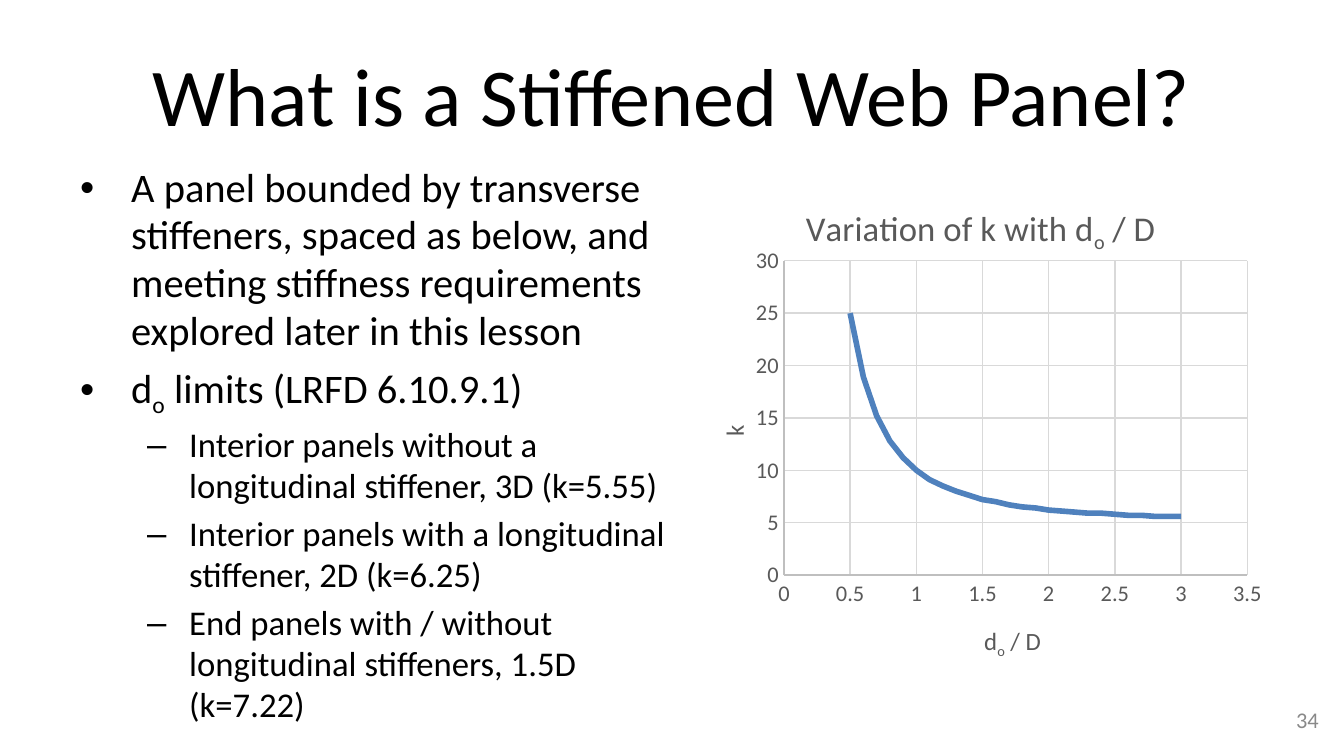
from lxml import etree
from pptx import Presentation
from pptx.chart.data import XyChartData
from pptx.dml.color import RGBColor
from pptx.enum.chart import XL_CHART_TYPE, XL_TICK_MARK
from pptx.enum.text import MSO_ANCHOR, PP_ALIGN
from pptx.oxml.ns import qn
from pptx.util import Emu, Pt

SCATTER = XL_CHART_TYPE.XY_SCATTER_LINES_NO_MARKERS
NO_TICK = XL_TICK_MARK.NONE
TOP, MIDDLE = MSO_ANCHOR.TOP, MSO_ANCHOR.MIDDLE
LEFT, CENTER, RIGHT = PP_ALIGN.LEFT, PP_ALIGN.CENTER, PP_ALIGN.RIGHT
FONT = "Calibri"
BLACK, GRAY, AXIS, GRID, BLUE = "000000", "595959", "BFBFBF", "D9D9D9", "4F81BD"
EMU_PER_PX = 914400 / 134.4

LEVELS = {
    0: dict(size=21.7, bullet="•", margin=51, hang=51, before=4.6),
    1: dict(size=18.6, bullet="–", margin=109, hang=42, before=4),
}
POINTS = [
    (0, "A panel bounded by transverse stiffeners, spaced as below, and "
        "meeting stiffness requirements explored later in this lesson"),
    (0, "d~o~ limits (LRFD 6.10.9.1)"),
    (1, "Interior panels without a longitudinal stiffener, 3D (k=5.55)"),
    (1, "Interior panels with a longitudinal stiffener, 2D (k=6.25)"),
    (1, "End panels with / without longitudinal stiffeners, 1.5D (k=7.22)"),
]


def px(length):
    return Emu(round(length * EMU_PER_PX))


def rgb(color):
    return RGBColor.from_string(color)


def format_font(font, size, color):
    font.name = FONT
    font.size = Pt(size)
    font.bold = False
    font.color.rgb = rgb(color)


def write(paragraph, text, size=12, color=BLACK, align=LEFT):
    paragraph.alignment = align
    for index, part in enumerate(text.split("~")):
        if part:
            run = paragraph.add_run()
            run.text = part
            format_font(run.font, size, color)
            if index % 2:
                run.font._element.set("baseline", "-25000")


def add_frame(slide, left, top, width, height, anchor=MIDDLE):
    frame = slide.shapes.add_textbox(
        px(left), px(top), px(width), px(height)).text_frame
    frame.word_wrap = True
    frame.vertical_anchor = anchor
    return frame


def add_bullet(paragraph, bullet, margin, hang):
    properties = paragraph._p.get_or_add_pPr()
    properties.set("marL", str(px(margin)))
    properties.set("indent", str(-px(hang)))
    etree.SubElement(properties, qn("a:buFont"), typeface="Arial")
    etree.SubElement(properties, qn("a:buChar"), char=bullet)


def add_points(slide):
    frame = add_frame(slide, 67, 155, 616, 601, TOP)
    frame.margin_top = px(9)
    for index, (level, text) in enumerate(POINTS):
        style = LEVELS[level]
        paragraph = frame.add_paragraph() if index else frame.paragraphs[0]
        paragraph.level = level
        paragraph.line_spacing = 0.98
        if index:
            paragraph.space_before = Pt(style["before"])
        add_bullet(paragraph, style["bullet"], style["margin"], style["hang"])
        write(paragraph, text, size=style["size"])


def place(element, position, **settings):
    layout = element.find(qn("c:layout"))
    if layout is None:
        layout = etree.Element(qn("c:layout"))
        element.insert(0 if element.find(qn("c:tx")) is None else 1, layout)
    manual = etree.SubElement(layout, qn("c:manualLayout"))
    values = dict(settings, xMode="edge", yMode="edge")
    values.update(zip("xywh", position))
    for name, value in values.items():
        etree.SubElement(manual, qn("c:" + name), val=str(value))


def add_chart_title(owner, title, text, size, position):
    write(title.text_frame.paragraphs[0], text, size=size, color=GRAY, align=CENTER)
    place(title._element, position)


def format_axis(axis, maximum, step):
    axis.minimum_scale = 0
    axis.maximum_scale = maximum
    axis.major_unit = step
    axis.major_tick_mark = axis.minor_tick_mark = NO_TICK
    axis.has_major_gridlines = True
    format_font(axis.tick_labels.font, 12, GRAY)
    for line, color in ((axis.format.line, AXIS),
                        (axis.major_gridlines.format.line, GRID)):
        line.color.rgb = rgb(color)
        line.width = Pt(0.75)


def add_buckling_chart(slide):
    data = XyChartData()
    curve = data.add_series("Series 1")
    for tenths in range(5, 31):
        ratio = tenths / 10
        curve.add_data_point(ratio, round(5 + 5 / ratio ** 2, 1))
    chart = slide.shapes.add_chart(
        SCATTER, px(683), px(176), px(594), px(499), data).chart
    chart.has_legend = False
    format_font(chart.font, 10, BLACK)
    ratio_axis, k_axis = chart.category_axis, chart.value_axis
    format_axis(ratio_axis, 3.5, 0.5)
    format_axis(k_axis, 30, 5)
    for owner, title, text, size, position in (
        (chart, chart.chart_title, "Variation of k with d~o~ / D", 18.6, (0.2, 0.05)),
        (ratio_axis, ratio_axis.axis_title, "d~o~ / D", 13.3, (0.5, 0.89)),
        (k_axis, k_axis.axis_title, "k", 13.3, (0.05, 0.49)),
    ):
        add_chart_title(owner, title, text, size, position)
    k_body = k_axis.axis_title.text_frame._txBody.bodyPr
    k_body.set("rot", "-5400000")
    k_body.set("vert", "horz")
    plot = chart.plots[0]
    plot.vary_by_categories = False
    series = plot.series[0]
    series.smooth = False
    series.format.line.color.rgb = rgb(BLUE)
    series.format.line.width = Pt(3)
    plot_area = chart._chartSpace.chart.plotArea
    place(plot_area, (0.17, 0.17, 0.78, 0.63), layoutTarget="inner")


def main():
    deck = Presentation()
    deck.slide_width, deck.slide_height = px(1344), px(756)
    slide = deck.slides.add_slide(deck.slide_layouts[6])
    heading = add_frame(slide, 67, 31, 1210, 126)
    write(heading.paragraphs[0], "What is a Stiffened Web Panel?",
          size=44, align=CENTER)
    add_points(slide)
    add_buckling_chart(slide)
    number = add_frame(slide, 1019, 700, 313, 40)
    write(number.paragraphs[0], "34", color="898989", align=RIGHT)
    deck.save("out.pptx")


if __name__ == "__main__":
    main()
